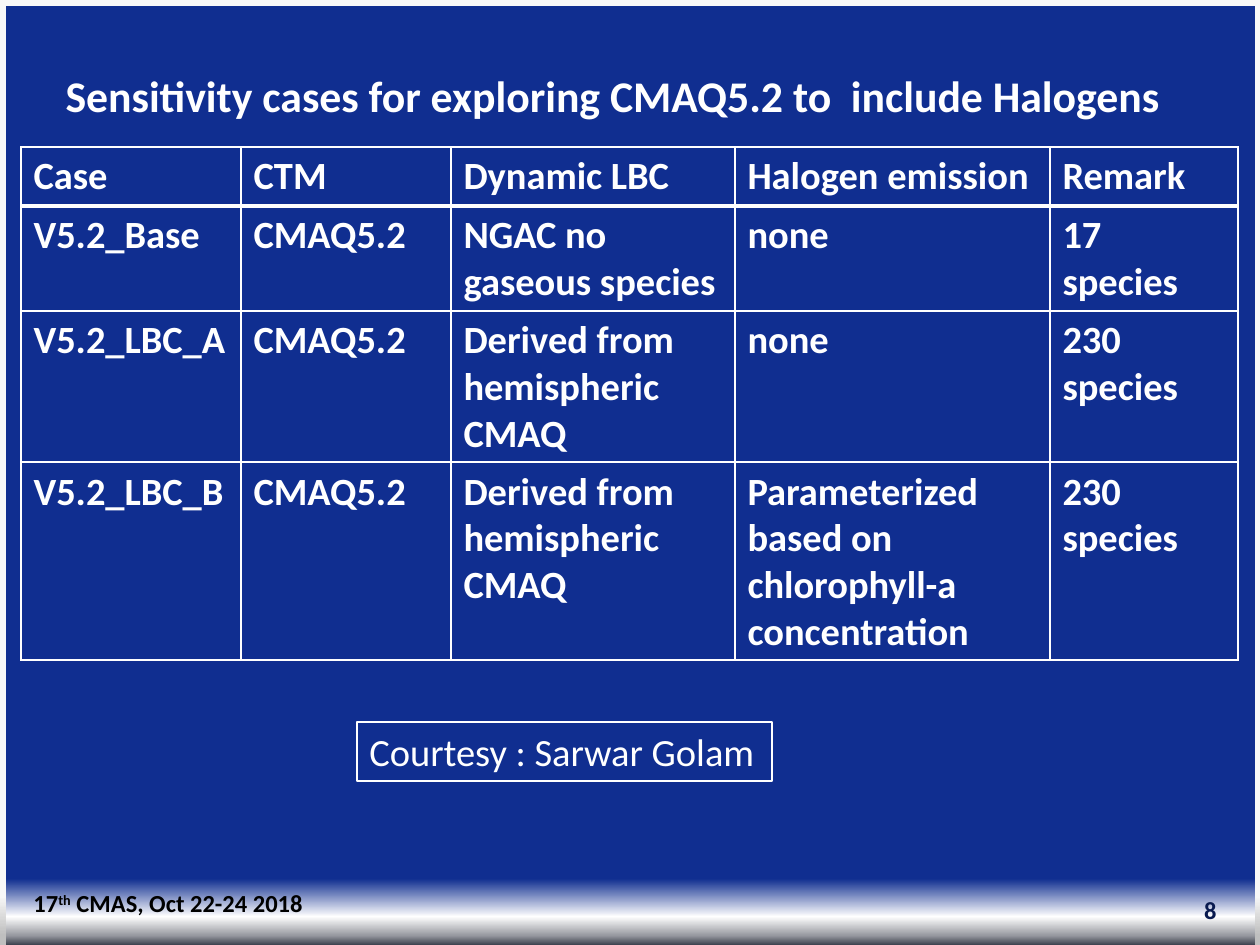
"""Build the slide on sensitivity cases for CMAQ5.2 with halogens."""
from lxml.etree import SubElement
from pptx import Presentation
from pptx.dml.color import RGBColor
from pptx.enum.shapes import MSO_SHAPE
from pptx.enum.text import MSO_ANCHOR, PP_ALIGN
from pptx.oxml.ns import qn
from pptx.util import Emu, Pt

SLIDE_W, SLIDE_H = 1260, 945
FONT = "Calibri"
WHITE = RGBColor(0xFF, 0xFF, 0xFF)
BLACK = RGBColor(0x00, 0x00, 0x00)
BLUE = RGBColor(0x10, 0x2E, 0x90)
NAVY = RGBColor(0x09, 0x1A, 0x4F)
PALE = RGBColor(0xF8, 0xF8, 0xF8)
MIST = RGBColor(0xF5, 0xF5, 0xF5)
SILVER = RGBColor(0xBF, 0xBF, 0xBF)
STEEL = RGBColor(0x97, 0x99, 0xA0)
SLATE = RGBColor(0x3C, 0x41, 0x4E)

BACKGROUND_STOPS = [(0, BLUE), (93, BLUE), (97, WHITE), (99, STEEL), (100, SLATE)]
EDGE_STOPS = [(0, PALE), (95, MIST), (99, SILVER), (100, SILVER)]
COLUMN_WIDTHS = [220, 210, 284, 315, 188]
ROW_HEIGHTS = [59, 104, 151, 198]
CASES = [
    ["Case", "CTM", "Dynamic LBC", "Halogen emission", "Remark"],
    ["V5.2_Base", "CMAQ5.2", "NGAC no gaseous species", "none", "17 species"],
    ["V5.2_LBC_A", "CMAQ5.2", "Derived from hemispheric CMAQ", "none", "230 species"],
    ["V5.2_LBC_B", "CMAQ5.2", "Derived from hemispheric CMAQ",
     "Parameterized based on chlorophyll-a  concentration", "230 species"],
]


def px(length):
    return Emu(round(length * 914400 / 126))


def style_runs(paragraph, size, color, bold=True):
    for run in paragraph.runs:
        run.font.name = FONT
        run.font.size = Pt(size)
        run.font.bold = bold
        run.font.color.rgb = color


def fill_gradient(fill, owner, stops):
    fill.gradient()
    fill.gradient_angle = 270
    stop_list = next(owner.iter(qn("a:gsLst")))
    stop_list.clear()
    for position, color in stops:
        stop = SubElement(stop_list, qn("a:gs"), pos=str(position * 1000))
        SubElement(stop, qn("a:srgbClr"), val=str(color))


def add_edge(slide, left, width, height):
    edge = slide.shapes.add_shape(MSO_SHAPE.RECTANGLE, px(left), 0, px(width), px(height))
    edge.shadow.inherit = False
    edge.line.fill.background()
    return edge


def add_side_edge(slide, left):
    edge = add_edge(slide, left, 6, SLIDE_H)
    fill_gradient(edge.fill, edge.element, EDGE_STOPS)


def add_label(slide, box, parts, size, color, bold=True):
    label = slide.shapes.add_textbox(*map(px, box))
    label.text_frame.word_wrap = False
    paragraph = label.text_frame.paragraphs[0]
    for part in parts:
        paragraph.add_run().text = part
    style_runs(paragraph, size, color, bold)
    return label


def set_title(slide, text):
    title = slide.shapes.title
    title.left, title.top, title.width, title.height = map(px, (53, 62, 1142, 65))
    frame = title.text_frame
    frame.text = text
    frame.word_wrap = False
    frame.vertical_anchor = MSO_ANCHOR.TOP
    frame.paragraphs[0].alignment = PP_ALIGN.LEFT
    style_runs(frame.paragraphs[0], 25, WHITE)


def set_borders(cell, top, bottom):
    properties = cell._tc.get_or_add_tcPr()
    for side, points in (("L", 1), ("R", 1), ("T", top), ("B", bottom)):
        line = SubElement(properties, qn(f"a:ln{side}"), w=str(Pt(points)))
        solid = SubElement(line, qn("a:solidFill"))
        SubElement(solid, qn("a:srgbClr"), val=str(WHITE))


def add_case_table(slide):
    box = map(px, (21, 147, sum(COLUMN_WIDTHS), sum(ROW_HEIGHTS)))
    table = slide.shapes.add_table(len(CASES), len(COLUMN_WIDTHS), *box).table
    for column, width in zip(table.columns, COLUMN_WIDTHS):
        column.width = px(width)
    for index, (row, height, texts) in enumerate(zip(table.rows, ROW_HEIGHTS, CASES)):
        row.height = px(height)
        for cell, text in zip(row.cells, texts):
            cell.text = text
            style_runs(cell.text_frame.paragraphs[0], 22, WHITE)
            set_borders(cell, 3 if index == 1 else 1, 3 if index == 0 else 1)
            cell.fill.solid()
            cell.fill.fore_color.rgb = BLUE


def add_footer(slide):
    number = add_label(slide, (935, 885, 294, 50), ["8"], 14, NAVY)
    number.text_frame.word_wrap = True
    number.text_frame.vertical_anchor = MSO_ANCHOR.MIDDLE
    number.text_frame.paragraphs[0].alignment = PP_ALIGN.RIGHT
    event = add_label(slide, (21, 882, 296, 43), ["17", "th", " CMAS, Oct 22-24 2018"], 14, BLACK)
    ordinal = event.text_frame.paragraphs[0].runs[1]
    ordinal._r.get_or_add_rPr().set("baseline", "30000")


def main():
    deck = Presentation()
    deck.slide_width, deck.slide_height = px(SLIDE_W), px(SLIDE_H)
    slide = deck.slides.add_slide(deck.slide_layouts[5])
    fill_gradient(slide.background.fill, slide.element, BACKGROUND_STOPS)
    add_side_edge(slide, 0)
    top_edge = add_edge(slide, 2, SLIDE_W - 2, 6)
    top_edge.fill.solid()
    top_edge.fill.fore_color.rgb = PALE
    add_side_edge(slide, SLIDE_W - 5)
    add_footer(slide)
    add_case_table(slide)
    set_title(slide, "Sensitivity cases for exploring CMAQ5.2 to  include Halogens")
    courtesy = add_label(slide, (357, 722, 415, 59), ["Courtesy : Sarwar Golam"], 22, WHITE, False)
    courtesy.line.color.rgb = WHITE
    courtesy.line.width = Pt(1)
    deck.save("out.pptx")


if __name__ == "__main__":
    main()
